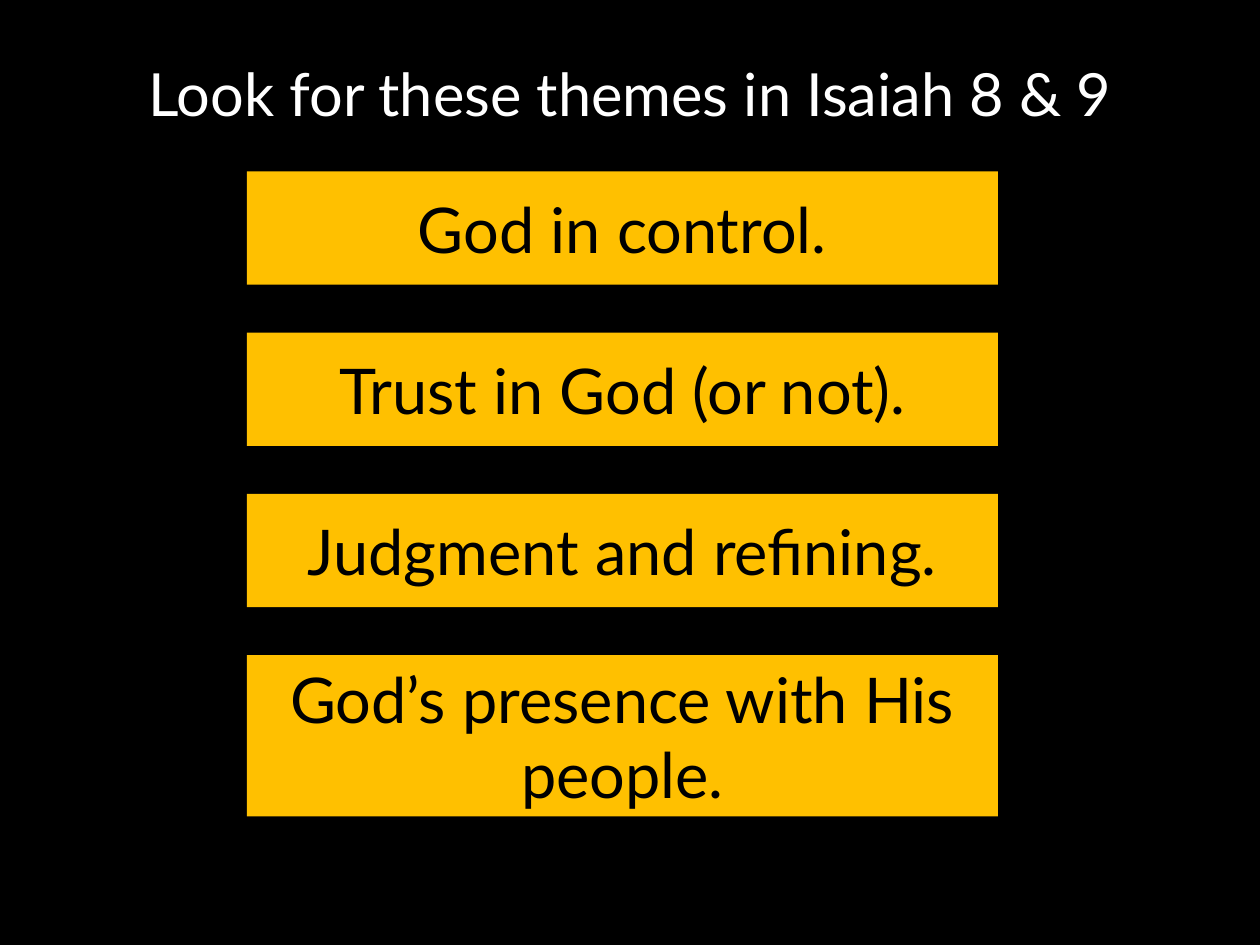
from dataclasses import dataclass
from pptx import Presentation
from pptx.dml.color import RGBColor as RGB
from pptx.enum.shapes import MSO_SHAPE as SHAPE
from pptx.enum.text import MSO_ANCHOR as ANCHOR, PP_ALIGN as ALIGN
from pptx.util import Inches, Pt


@dataclass
class Theme:
    back: RGB = RGB(0x00, 0x00, 0x00)
    box: RGB = RGB(0xFF, 0xC0, 0x00)
    ink: RGB = RGB(0x00, 0x00, 0x00)
    title: RGB = RGB(0xFF, 0xFF, 0xFF)
    font: str = "Lato"
    title_size: int = 34
    box_size: int = 36


def write(sp, text, size, color, anchor):
    tf = sp.text_frame
    tf.word_wrap = True
    tf.vertical_anchor = anchor
    p = tf.paragraphs[0]
    p.text = text
    p.alignment = ALIGN.CENTER
    p.font.name = theme.font
    p.font.size = Pt(size)
    p.font.color.rgb = color
    return p


theme = Theme()
prs = Presentation()
prs.slide_width, prs.slide_height = Inches(10), Inches(7.5)
s = prs.slides.add_slide(prs.slide_layouts[6])
s.background.fill.solid()
s.background.fill.fore_color.rgb = theme.back

left, top, width, row = 1.96, 1.36, 5.96, 1.28
themes = [
    ("God in control.", 0.9),
    ("Trust in God (or not).", 0.9),
    ("Judgment and refining.", 0.9),
    ("God’s presence with His people.", row),
]

sp = s.shapes.add_textbox(Inches(0.69), Inches(0.51), Inches(8.62), Inches(0.85))
p = write(sp, "Look for these themes in Isaiah 8 & 9", theme.title_size, theme.title, ANCHOR.TOP)
p.line_spacing = 0.8

for i, (text, height) in enumerate(themes):
    sp = s.shapes.add_shape(SHAPE.RECTANGLE, Inches(left), Inches(top + i * row), Inches(width), Inches(height))
    sp.shadow.inherit = False
    sp.fill.solid()
    sp.fill.fore_color.rgb = theme.box
    sp.line.fill.background()
    write(sp, text, theme.box_size, theme.ink, ANCHOR.MIDDLE)

prs.save("out.pptx")
